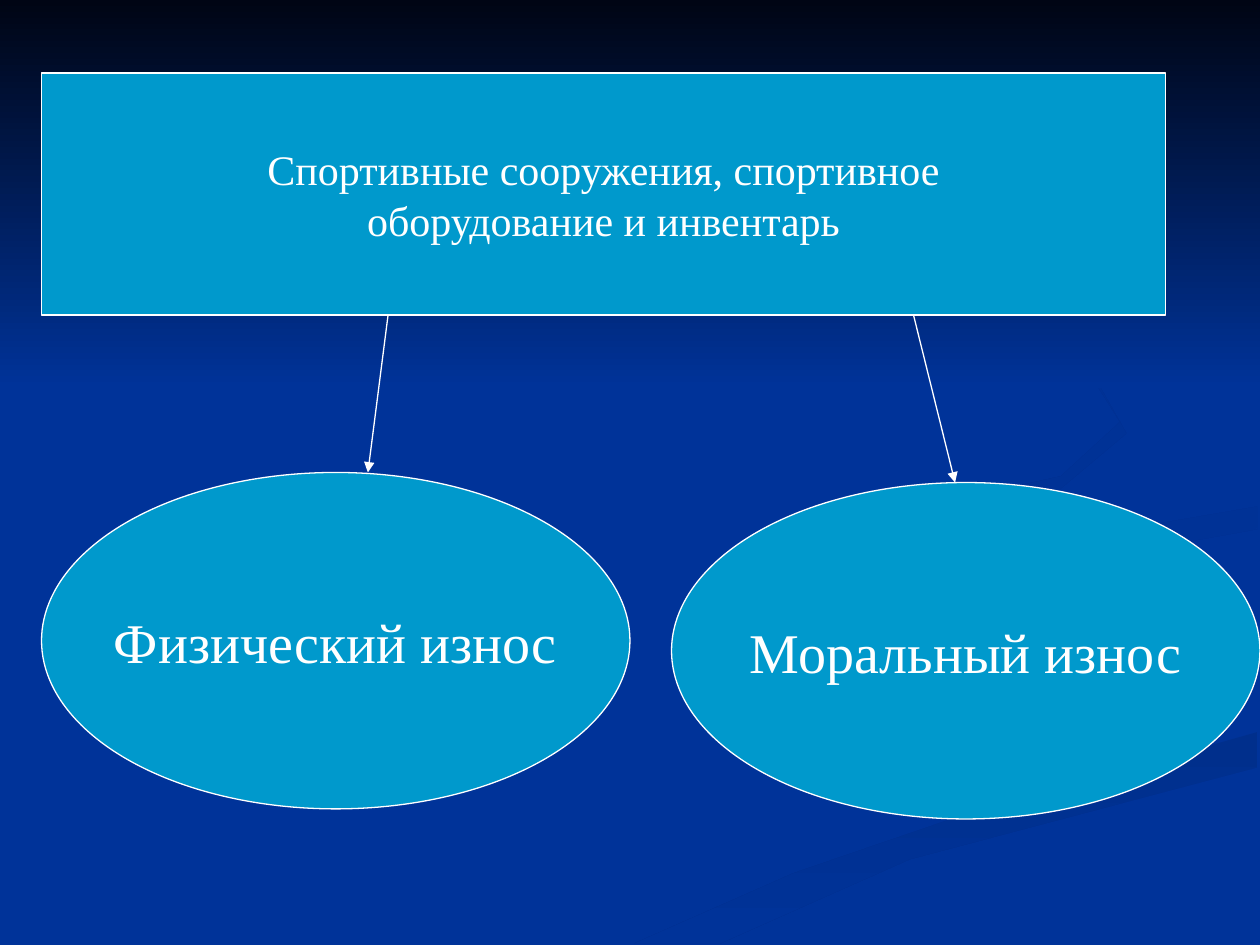
from pptx import Presentation
from pptx.dml.color import RGBColor
from pptx.enum.shapes import MSO_CONNECTOR, MSO_SHAPE
from pptx.enum.text import MSO_ANCHOR, PP_ALIGN
from pptx.oxml.ns import qn
from pptx.util import Inches, Pt
from lxml.etree import SubElement

COLORS = {"blue": "003399", "night": "000514", "box": "0099CC", "white": "FFFFFF",
          "shade": "002F8C", "mist": "003091", "dusk": "002F8E"}
FONT = "Times New Roman"

# Content: kind, lines, text size, place in inches
NODES = [
    (MSO_SHAPE.RECTANGLE, ["Спортивные сооружения, спортивное", "оборудование и инвентарь"],
     24, (0.33, 0.58, 8.92, 1.92)),
    (MSO_SHAPE.OVAL, ["Физический износ"], 32, (0.33, 3.75, 4.67, 2.67)),
    (MSO_SHAPE.OVAL, ["Моральный износ"], 32, (5.33, 3.83, 4.67, 2.67)),
]
ARROWS = [((3.08, 2.5), (2.92, 3.75)), ((7.25, 2.5), (7.58, 3.83))]

# Background waves: first colour, angle, outline in inches
WAVES = [
    ("shade", 90, [(5.03, 7.49), (5.71, 7.49), (7.22, 6.82), (9.98, 6.09),
                   (9.98, 5.81), (7.64, 6.47), (6.3, 6.93)]),
    ("mist", 45, [(7.81, 4.6), (8.26, 4.96), (8.05, 4.72), (8.43, 4.48), (9.98, 4.2),
                  (9.98, 4.02), (8.35, 4.3)]),
    ("dusk", 45, [(6.83, 4.3), (8.25, 4.02), (8.94, 3.44), (8.64, 2.91), (7.62, 2.33),
                  (8.62, 2.92), (8.89, 3.35), (8.42, 3.78), (6.25, 4.26), (5.77, 4.62),
                  (6.22, 5), (5.93, 4.7)]),
]


def rgb(name):
    return RGBColor.from_string(COLORS[name])


def blend(shape, first, angle):
    shape.shadow.inherit = False
    shape.line.fill.background()
    shape.fill.gradient()
    shape.fill.gradient_angle = 360 - angle
    for stop, name in zip(shape.fill.gradient_stops, (first, "blue")):
        stop.color.rgb = rgb(name)


def write(frame, lines, size, color="white", align=PP_ALIGN.CENTER):
    frame.word_wrap = False
    frame.vertical_anchor = MSO_ANCHOR.MIDDLE
    for i, line in enumerate(lines):
        para = frame.paragraphs[0] if i == 0 else frame.add_paragraph()
        para.alignment = align
        run = para.add_run()
        run.text = line
        run.font.name = FONT
        run.font.size = Pt(size)
        run.font.color.rgb = rgb(color)


def edge(item):
    item.line.color.rgb = rgb("white")
    item.line.width = Pt(0.75)


deck = Presentation()
deck.slide_width, deck.slide_height = Inches(10), Inches(7.5)
slide = deck.slides.add_slide(deck.slide_layouts[6])
shapes = slide.shapes

# Background
slide.background.fill.solid()
slide.background.fill.fore_color.rgb = rgb("blue")
for first, angle, points in WAVES:
    dots = [(Inches(x), Inches(y)) for x, y in points]
    pen = shapes.build_freeform(*dots[0])
    pen.add_line_segments(dots[1:], close=True)
    blend(pen.convert_to_shape(), first, angle)
sky = shapes.add_shape(MSO_SHAPE.RECTANGLE, 0, 0, deck.slide_width, Inches(3.08))
blend(sky, "night", 90)

# Box and ovals
for kind, lines, size, place in NODES:
    node = shapes.add_shape(kind, *map(Inches, place))
    node.shadow.inherit = False
    node.fill.solid()
    node.fill.fore_color.rgb = rgb("box")
    edge(node)
    write(node.text_frame, lines, size)

# Arrows
for start, end in ARROWS:
    arrow = shapes.add_connector(MSO_CONNECTOR.STRAIGHT, *map(Inches, start + end))
    edge(arrow)
    props = arrow._element.spPr
    SubElement(props.find(qn("a:ln")), qn("a:tailEnd"), type="triangle")
    SubElement(props, qn("a:effectLst"))

deck.save("out.pptx")
